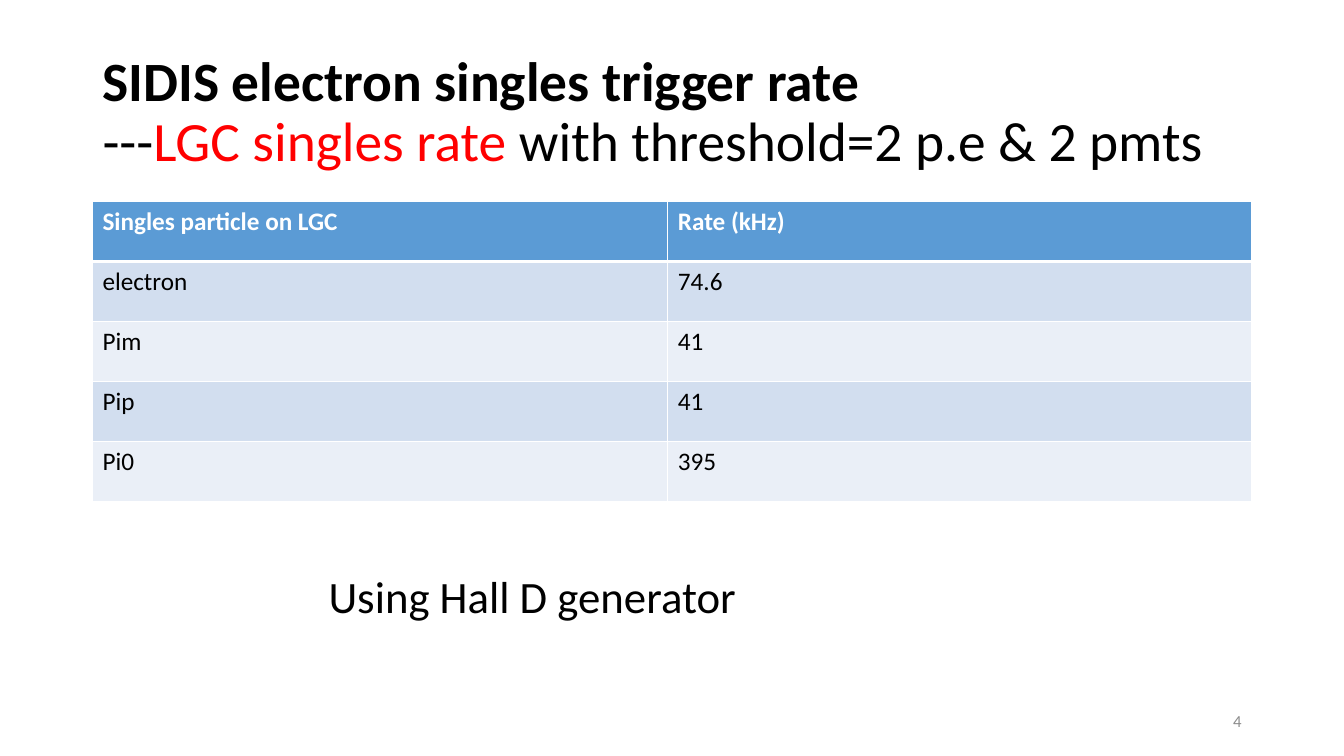
from dataclasses import dataclass

from lxml import etree
from pptx import Presentation
from pptx import util as u
from pptx.dml.color import RGBColor
from pptx.enum import text
from pptx.oxml import ns


@dataclass(frozen=True)
class Theme:
    font: str = "Calibri"
    black: str = "000000"
    white: str = "FFFFFF"
    red: str = "FF0000"
    grey: str = "8C8C8C"
    header: str = "5B9BD5"
    bands: tuple = ("D2DEEF", "EAEFF7")
    title_size: float = 39.6
    note_size: float = 32
    table_size: float = 18
    number_size: float = 12
    rule: float = 1
    header_rule: float = 3


THEME = Theme()
RATES = [
    ("Singles particle on LGC", "Rate (kHz)"),
    ("electron", "74.6"),
    ("Pim", "41"),
    ("Pip", "41"),
    ("Pi0", "395"),
]


def style(span, size, color, bold=False):
    span.font.name = THEME.font
    span.font.size = u.Pt(size)
    span.font.bold = bold
    span.font.color.rgb = RGBColor.from_string(color)


def place(shape, box):
    shape.left, shape.top, shape.width, shape.height = map(u.Cm, box)


def add_title(page, box):
    title = page.shapes.title
    place(title, box)
    frame = title.text_frame
    frame.auto_size = text.MSO_AUTO_SIZE.NONE
    frame.word_wrap = True
    frame.vertical_anchor = text.MSO_ANCHOR.MIDDLE
    para = frame.paragraphs[0]
    para.text = "SIDIS electron singles trigger rate \v---"
    para.alignment = text.PP_ALIGN.LEFT
    para.line_spacing = 0.9
    for words in ("LGC singles rate ", "with threshold=2 p.e & 2 pmts"):
        para.add_run().text = words
    heading, dashes, subject, condition = para.runs
    style(heading, THEME.title_size, THEME.black, bold=True)
    style(dashes, THEME.title_size, THEME.black)
    style(subject, THEME.title_size, THEME.red)
    style(condition, THEME.title_size, THEME.black)


def add_border(cell, side, width):
    """Draw one white cell edge; side is L, R, T or B, added in that order."""
    line = etree.SubElement(cell._tc.get_or_add_tcPr(), ns.qn(f"a:ln{side}"), w=str(u.Pt(width)))
    fill = etree.SubElement(line, ns.qn("a:solidFill"))
    etree.SubElement(fill, ns.qn("a:srgbClr"), val=THEME.white)


def add_rate_table(page, box, first_column):
    left, top, width, height = box
    frame = page.shapes.add_table(len(RATES), len(RATES[0]), *map(u.Cm, box))
    table = frame.table
    table.columns[0].width = u.Cm(first_column)
    table.columns[1].width = u.Cm(width - first_column)
    for row, values in enumerate(RATES):
        table.rows[row].height = u.Cm(height / len(RATES))
        is_header = row == 0
        fill = THEME.header if is_header else THEME.bands[(row - 1) % 2]
        edges = {
            "L": THEME.rule,
            "R": THEME.rule,
            "T": THEME.header_rule if row == 1 else THEME.rule,
            "B": THEME.header_rule if is_header else THEME.rule,
        }
        for column, value in enumerate(values):
            cell = table.cell(row, column)
            for side, weight in edges.items():
                add_border(cell, side, weight)
            cell.fill.solid()
            cell.fill.fore_color.rgb = RGBColor.from_string(fill)
            cell.text_frame.text = value
            color = THEME.white if is_header else THEME.black
            style(cell.text_frame.paragraphs[0].runs[0], THEME.table_size, color, is_header)


def add_label(page, box, words, size, color, align=text.PP_ALIGN.LEFT, anchor=text.MSO_ANCHOR.TOP):
    frame = page.shapes.add_textbox(*map(u.Cm, box)).text_frame
    frame.word_wrap = True
    frame.vertical_anchor = anchor
    frame.text = words
    para = frame.paragraphs[0]
    para.alignment = align
    style(para.runs[0], size, color)


def main():
    deck = Presentation()
    deck.slide_width, deck.slide_height = u.Cm(33.87), u.Cm(19.05)
    page = deck.slides.add_slide(deck.slide_layouts[5])
    margin, width = 2.33, 29.21
    add_title(page, (margin, 1.01, width, 3.68))
    add_rate_table(page, (margin, 5.08, width, 7.55), first_column=14.5)
    add_label(page, (8.03, 14.2, 16.92, 1.63), "Using Hall D generator", THEME.note_size, THEME.black)
    number_width = 7.62
    add_label(page, (margin + width - number_width, 17.65, number_width, 1.02), "4",
              THEME.number_size, THEME.grey, text.PP_ALIGN.RIGHT, text.MSO_ANCHOR.MIDDLE)
    deck.save("out.pptx")


if __name__ == "__main__":
    main()
